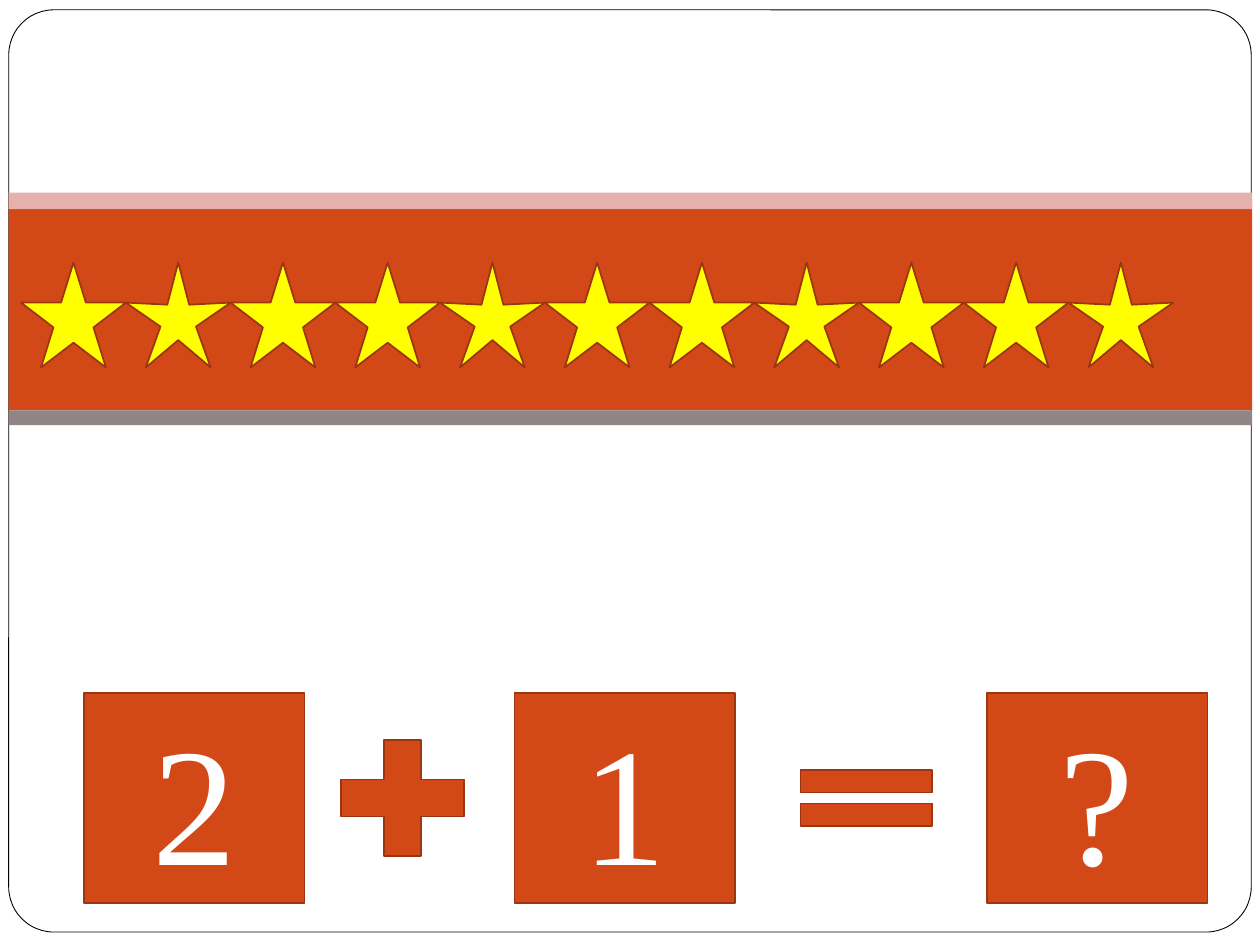
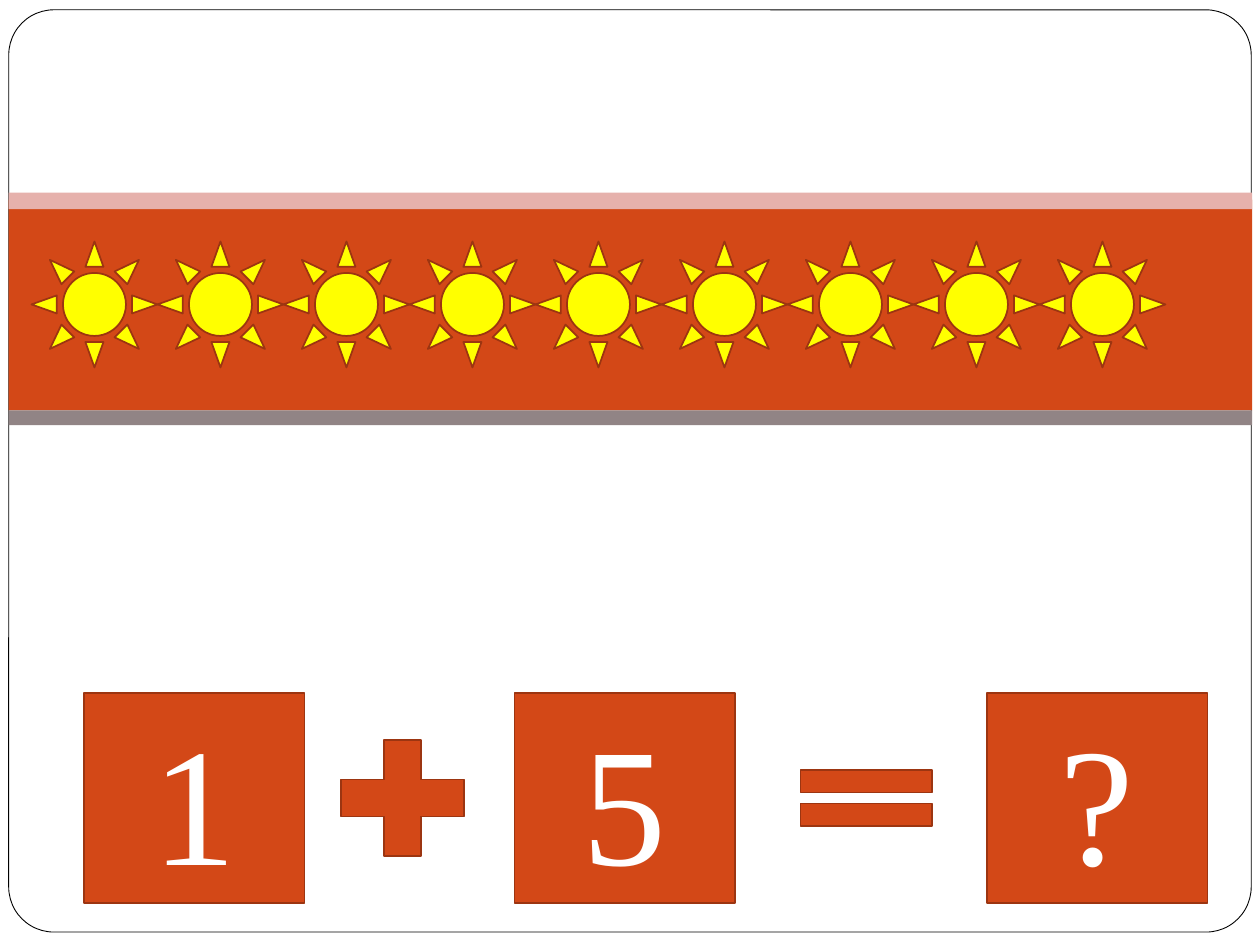
from pptx import Presentation
from pptx.dml.color import RGBColor
from pptx.enum.shapes import MSO_SHAPE
from pptx.enum.text import MSO_ANCHOR, PP_ALIGN
from pptx.util import Pt

RECT = MSO_SHAPE.RECTANGLE
ROUND = MSO_SHAPE.ROUNDED_RECTANGLE
CARD = MSO_SHAPE.FLOWCHART_PROCESS
PLUS = MSO_SHAPE.MATH_PLUS
EQUAL = MSO_SHAPE.MATH_EQUAL
STAR = MSO_SHAPE.STAR_5_POINT
SUN = MSO_SHAPE.SUN
MIDDLE = MSO_ANCHOR.MIDDLE
CENTER = PP_ALIGN.CENTER

FONT = "Times New Roman"
COLORS = {
    "white": "FFFFFF",
    "black": "000000",
    "orange": "D34817",
    "rust": "9C3511",
    "pink": "E6B1AC",
    "gray": "918485",
    "yellow": "FFFF00",
}


def color(name):
    return RGBColor.from_string(COLORS[name])


def add_form(slide, kind, box, fill, line="rust", width=1):
    form = slide.shapes.add_shape(kind, *[Pt(n) for n in box])
    form.shadow.inherit = False
    form.fill.solid()
    form.fill.fore_color.rgb = color(fill)
    if line:
        form.line.color.rgb = color(line)
        form.line.width = Pt(width)
    else:
        form.line.fill.background()
    return form


def add_frame(slide):
    frame = add_form(slide, ROUND, (5, 5.6, 710, 527), "white", "black", 0.5)
    frame.adjustments[0] = 0.049
    bands = [(114, 120.5, "orange"), (110, 9.5, "pink"), (234.5, 8.5, "gray")]
    for top, height, fill in bands:
        add_form(slide, RECT, (5, top, 710.5, height), fill, None)


def add_card(slide, left, text):
    card = add_form(slide, CARD, (left, 396, 126, 120), "orange")
    frame = card.text_frame
    frame.vertical_anchor = MIDDLE
    line = frame.paragraphs[0]
    line.alignment = CENTER
    run = line.add_run()
    run.text = text
    run.font.name = FONT
    run.font.size = Pt(96)
    run.font.color.rgb = color("white")


def add_sum(slide, first, second):
    for left, text in zip((48, 294, 564), (first, second, "?")):
        add_card(slide, left, text)
    add_form(slide, PLUS, (182, 411, 96, 90), "orange")
    add_form(slide, EQUAL, (444, 429, 102, 54), "orange")


def add_row(slide, kind, count, left, top, size, pitch):
    return [
        add_form(slide, kind, (left + i * pitch, top, size, size), "yellow")
        for i in range(count)
    ]


def add_page(deck, first, second):
    slide = deck.slides.add_slide(deck.slide_layouts[6])
    add_frame(slide)
    add_sum(slide, first, second)
    return slide


def main():
    deck = Presentation()
    deck.slide_width, deck.slide_height = Pt(720), Pt(540)

    slide = add_page(deck, "2", "1")
    stars = add_row(slide, STAR, 11, 12, 150, 60, 59.85)
    for star in stars[1::3]:
        star.adjustments[0] = 0.169

    slide = add_page(deck, "1", "5")
    add_row(slide, SUN, 9, 18, 138, 72, 72)

    deck.save("out.pptx")


if __name__ == "__main__":
    main()
